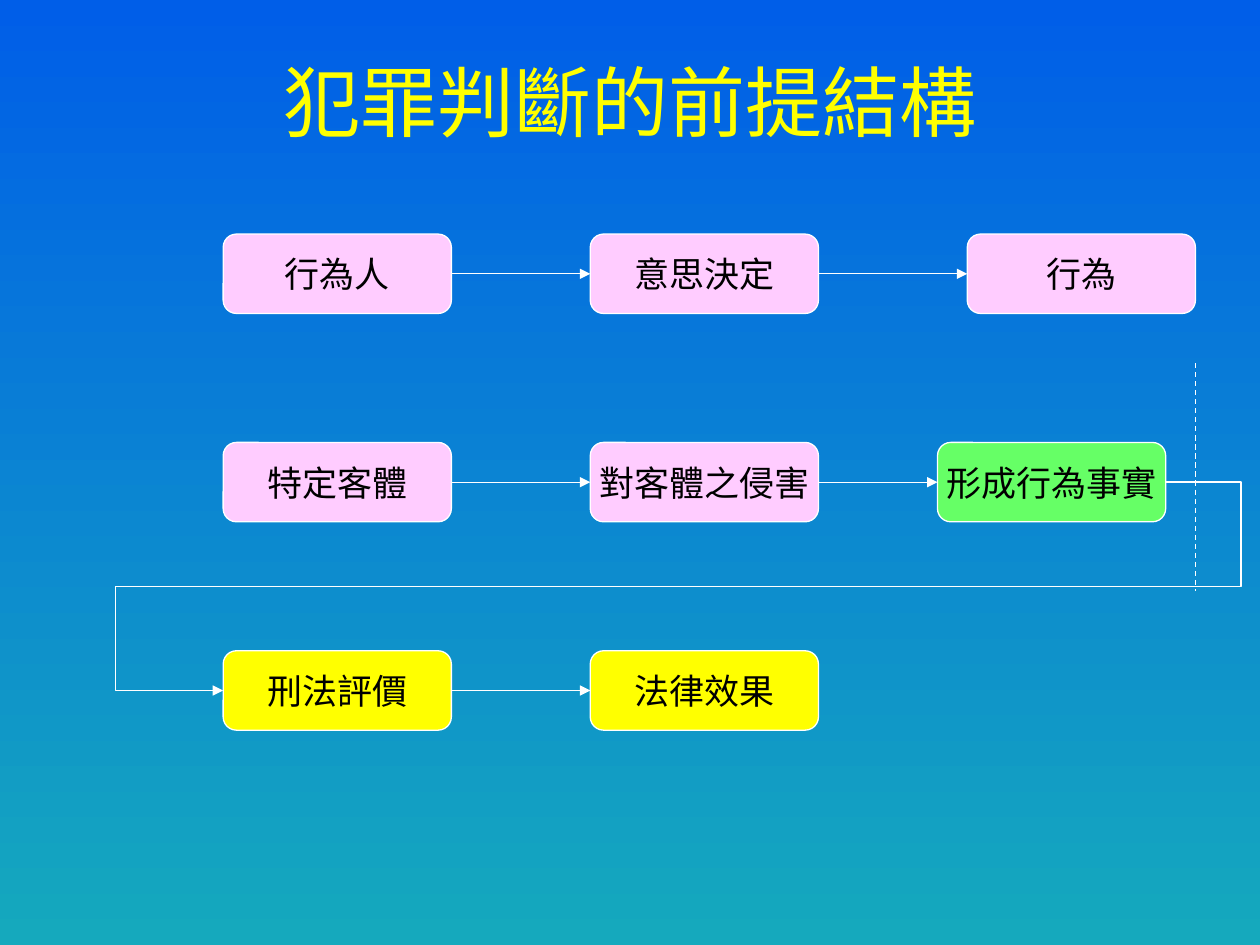
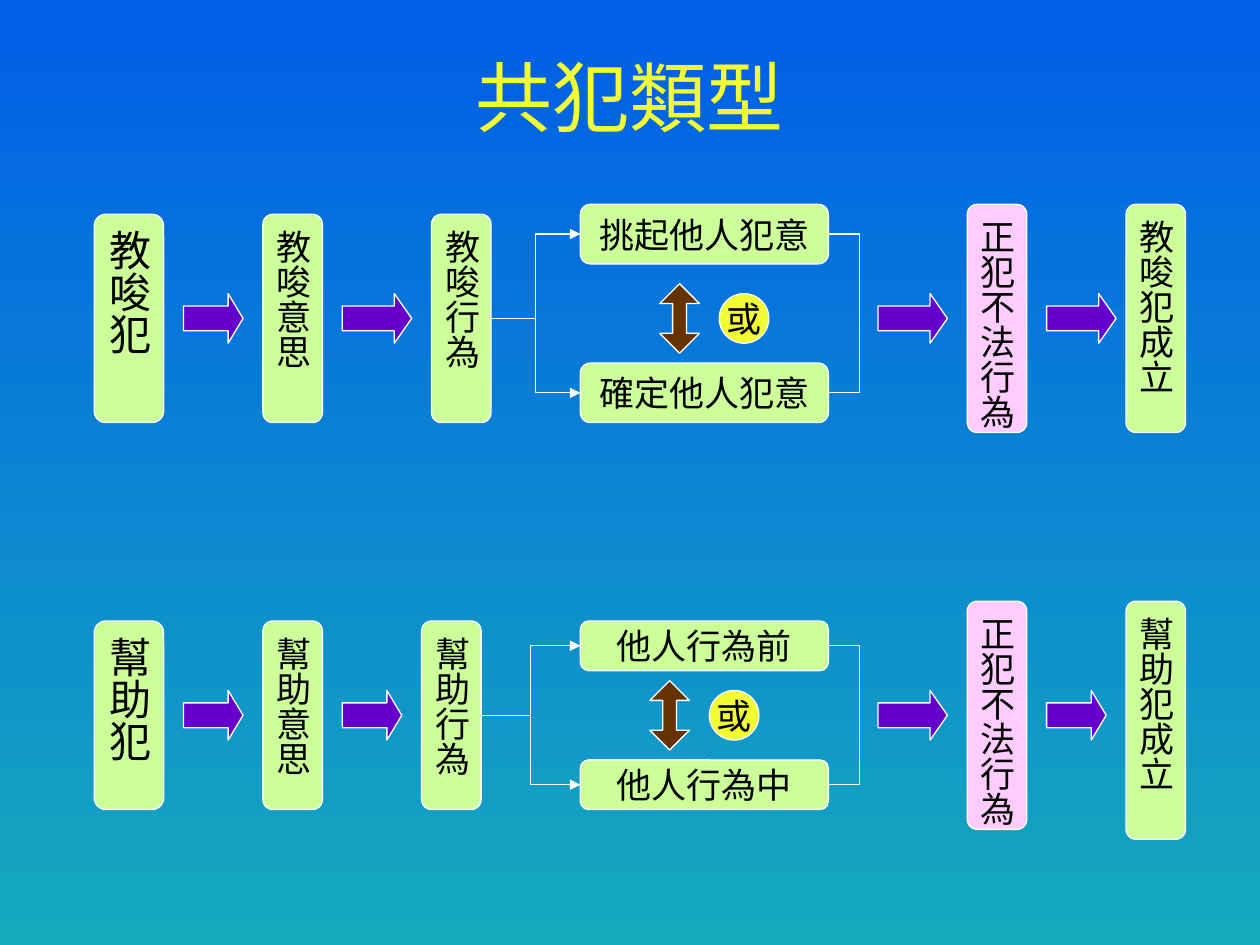
from lxml import etree
from pptx import Presentation
from pptx.dml.color import RGBColor
from pptx.enum.dml import MSO_LINE
from pptx.enum.shapes import MSO_CONNECTOR, MSO_SHAPE
from pptx.enum.text import MSO_ANCHOR, PP_ALIGN
from pptx.oxml.ns import qn
from pptx.util import Cm, Pt

BOX = MSO_SHAPE.FLOWCHART_ALTERNATE_PROCESS
CIRCLE = MSO_SHAPE.FLOWCHART_CONNECTOR
RIGHT_ARROW = MSO_SHAPE.RIGHT_ARROW
UP_DOWN_ARROW = MSO_SHAPE.UP_DOWN_ARROW
STRAIGHT, ELBOW = MSO_CONNECTOR.STRAIGHT, MSO_CONNECTOR.ELBOW
DASH = MSO_LINE.DASH
CENTER, MIDDLE = PP_ALIGN.CENTER, MSO_ANCHOR.MIDDLE
LEFT_SIDE, RIGHT_SIDE = 1, 3

COLORS = {
    "sky": "005EE8", "sea": "15A9BD", "line": "FFFFFF", "text": "000000",
    "yellow": "FFFF00", "lemon": "F2FC34", "pink": "FFCCFF", "green": "66FF66",
    "lime": "CCFF99", "purple": "6600CC", "brown": "663300",
}
COLORS = {name: RGBColor.from_string(code) for name, code in COLORS.items()}
TITLE_FONT, BODY_FONT = "Arial", "Lato"
LINE_WIDTH = Pt(0.75)


def add_node(slide, kind, x, y, w, h, fill, text="", size=20, vertical=False):
    """Add a filled, outlined shape, placed in centimetres, with centred text."""
    node = slide.shapes.add_shape(kind, Cm(x), Cm(y), Cm(w), Cm(h))
    node.shadow.inherit = False
    node.fill.solid()
    node.fill.fore_color.rgb = COLORS[fill]
    node.line.color.rgb = COLORS["line"]
    node.line.width = LINE_WIDTH
    if text:
        frame = node.text_frame
        frame.word_wrap = False
        frame.vertical_anchor = MIDDLE
        if vertical:
            frame._txBody.bodyPr.set("vert", "eaVert")
        frame.paragraphs[0].alignment = CENTER
        run = frame.paragraphs[0].add_run()
        run.text = text
        run.font.name = BODY_FONT
        run.font.size = Pt(size)
        run.font.color.rgb = COLORS["text"]
    return node


def add_line(slide, kind, ends=(0, 0, 0, 0), start=None, goal=None,
             goal_side=LEFT_SIDE, arrow=True, dash=None):
    """Draw a line between points, or from the right side of start to goal."""
    line = slide.shapes.add_connector(kind, *[Cm(v) for v in ends])
    if start:
        line.begin_connect(start, RIGHT_SIDE)
        line.end_connect(goal, goal_side)
    line.line.color.rgb = COLORS["line"]
    line.line.width = LINE_WIDTH
    if dash:
        line.line.dash_style = dash
    properties = line._element.spPr
    if arrow:
        etree.SubElement(properties.find(qn("a:ln")), qn("a:tailEnd"), type="triangle")
    etree.SubElement(properties, qn("a:effectLst"))
    return line


prs = Presentation()
prs.slide_width, prs.slide_height = Cm(25.4), Cm(19.05)

# Background and title of both slides
slides = []
for title, title_height, title_color in [
    ("犯罪判斷的前提結構", 2.56, "yellow"),
    ("共犯類型", 2.36, "lemon"),
]:
    slide = prs.slides.add_slide(prs.slide_layouts[6])
    background = slide.background.fill
    background.gradient()
    background.gradient_angle = 270
    for stop, position, color in zip(background.gradient_stops, (0, 1), ("sky", "sea")):
        stop.position = position
        stop.color.rgb = COLORS[color]
    heading = slide.shapes.add_textbox(Cm(1.27), Cm(0.76), Cm(22.86), Cm(title_height))
    heading.text_frame.word_wrap = True
    heading.text_frame.vertical_anchor = MIDDLE
    heading.text_frame.paragraphs[0].alignment = CENTER
    run = heading.text_frame.paragraphs[0].add_run()
    run.text = title
    run.font.name = TITLE_FONT
    run.font.size = Pt(44)
    run.font.color.rgb = COLORS[title_color]
    slides.append(slide)
structure, accomplices = slides

# Slide 1: three rows of steps
STEP_ROWS = [
    [("行為人", 4.5, "pink"), ("意思決定", 11.9, "pink"), ("行為", 19.5, "pink")],
    [("特定客體", 4.5, "pink"), ("對客體之侵害", 11.9, "pink"), ("形成行為事實", 18.9, "green")],
    [("刑法評價", 4.5, "yellow"), ("法律效果", 11.9, "yellow")],
]
step_nodes = []
for row, steps in enumerate(STEP_ROWS):
    nodes = [add_node(structure, BOX, x, 4.72 + 4.2 * row, 4.6, 1.6, fill, text)
             for text, x, fill in steps]
    for start, goal in zip(nodes, nodes[1:]):
        add_line(structure, STRAIGHT, start=start, goal=goal)
    step_nodes.append(nodes)

add_line(structure, STRAIGHT, (24.1, 7.32, 24.1, 11.92), arrow=False, dash=DASH)
wrap_line = add_line(structure, ELBOW, start=step_nodes[1][-1], goal=step_nodes[2][0])
bends = wrap_line._element.spPr.find(qn("a:prstGeom"))
bends.set("prst", "bentConnector5")
guides = bends.find(qn("a:avLst"))
for number, share in enumerate((-0.08, 0.5, 1.114), 1):
    etree.SubElement(guides, qn("a:gd"), name=f"adj{number}", fmla=f"val {round(share * 100000)}")

# Slide 2: one chain per type of accomplice, laid out around its middle height
CHAINS = [
    {
        "middle": 6.42, "height": 4.2, "act_x": 8.7, "result_height": 4.6,
        "texts": ("教唆犯", "教唆意思", "教唆行為", "教唆犯成立"),
        "options": [("挑起他人犯意", 4.12), ("確定他人犯意", 7.32)], "option_height": 1.2,
        "or_x": 13.3, "arrows": [(3.7, 1.2), (6.9, 1.4), (17.7, 1.4), (21.1, 1.4)],
    },
    {
        "middle": 14.42, "height": 3.8, "act_x": 8.5, "result_height": 4.8,
        "texts": ("幫助犯", "幫助意思", "幫助行為", "幫助犯成立"),
        "options": [("他人行為前", 12.52), ("他人行為中", 15.32)], "option_height": 1.0,
        "or_x": 13.1, "arrows": [(3.7, 1.2), (6.9, 1.2), (17.7, 1.4), (21.1, 1.2)],
    },
]
for chain in CHAINS:
    middle, height = chain["middle"], chain["height"]
    top, outcome_top = middle - height / 2, middle - 2.3
    kind_text, intent_text, act_text, result_text = chain["texts"]

    add_node(accomplices, BOX, 1.9, top, 1.4, height, "lime", kind_text, 24, True)
    add_node(accomplices, BOX, 5.3, top, 1.2, height, "lime", intent_text, vertical=True)
    act = add_node(accomplices, BOX, chain["act_x"], top, 1.2, height, "lime",
                   act_text, vertical=True)
    add_node(accomplices, BOX, 19.5, outcome_top, 1.2, 4.6, "pink", "正犯不法行為", vertical=True)
    add_node(accomplices, BOX, 22.7, outcome_top, 1.2, chain["result_height"], "lime",
             result_text, vertical=True)

    options = [add_node(accomplices, BOX, 11.7, y, 5, chain["option_height"], "lime", text)
               for text, y in chain["options"]]
    for option in options:
        add_line(accomplices, ELBOW, start=act, goal=option)
    # Starting with the end to the right and below keeps the bracket unflipped
    bracket = add_line(accomplices, ELBOW, (16, 0, 17, 19), options[0], options[1],
                       RIGHT_SIDE, arrow=False)
    # The bend is a multiple of the width, so the bracket needs a sliver of width
    bracket.width = Cm(0.01)
    guides = bracket._element.spPr.find(qn("a:prstGeom")).find(qn("a:avLst"))
    etree.SubElement(guides, qn("a:gd"), name="adj1", fmla="val 6300000")

    for x, width in chain["arrows"]:
        arrow = add_node(accomplices, RIGHT_ARROW, x, middle - 0.5, width, 1, "purple")
        arrow.adjustments[1] = 0.3 if width == 1.2 else 0.35
    either = add_node(accomplices, UP_DOWN_ARROW, chain["or_x"], middle - 0.7, 0.8, 1.4, "brown")
    either.adjustments[1] = 0.35
    add_node(accomplices, CIRCLE, chain["or_x"] + 1.2, middle - 0.5, 1, 1, "lemon", "或")

prs.save("out.pptx")
